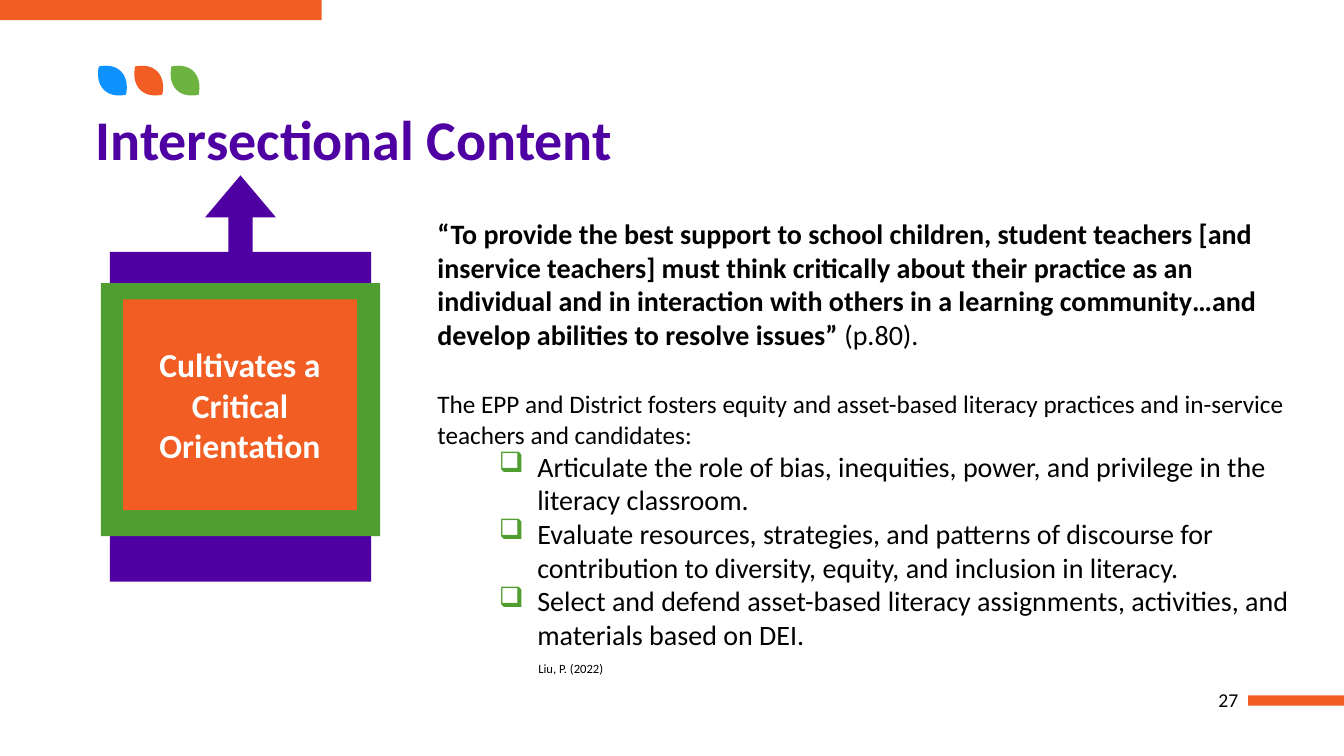
from dataclasses import dataclass

from lxml import etree
from pptx import Presentation
from pptx.dml.color import RGBColor
from pptx.enum.shapes import MSO_SHAPE
from pptx.enum.text import MSO_ANCHOR, PP_ALIGN
from pptx.oxml.ns import qn
from pptx.util import Inches, Pt

RECTANGLE = MSO_SHAPE.RECTANGLE
ARROW_CALLOUT = MSO_SHAPE.RIGHT_ARROW_CALLOUT
TOP, MIDDLE = MSO_ANCHOR.TOP, MSO_ANCHOR.MIDDLE
LEFT, CENTER, RIGHT = PP_ALIGN.LEFT, PP_ALIGN.CENTER, PP_ALIGN.RIGHT


@dataclass(frozen=True)
class Theme:
    font: str = "Calibri"
    orange: str = "F15D22"
    blue: str = "0D92FF"
    leaf_green: str = "6CB33F"
    green: str = "509E2F"
    purple: str = "4F00A3"
    black: str = "000000"
    white: str = "FFFFFF"
    title: int = 40
    callout: int = 24
    body: int = 20
    lead_in: int = 18
    page_number: int = 14
    citation: int = 9


THEME = Theme()


@dataclass(frozen=True)
class Frame:
    left: float
    top: float
    width: float
    height: float

    def lengths(self) -> list:
        return [Inches(n) for n in (self.left, self.top, self.width, self.height)]


@dataclass(frozen=True)
class Span:
    text: str
    size: int
    color: str = THEME.black
    bold: bool = False


@dataclass(frozen=True)
class Para:
    spans: tuple
    align: PP_ALIGN = LEFT
    line_spacing: float = 1.0
    space_before: float = 0
    bullet: str = ""


@dataclass(frozen=True)
class Block:
    frame: Frame
    color: str
    shape: MSO_SHAPE = RECTANGLE
    rotation: int = 0
    adjustments: tuple = ()


@dataclass(frozen=True)
class TextBox:
    frame: Frame
    paras: tuple
    anchor: MSO_ANCHOR = TOP
    side_inset: float = 0.1
    end_inset: float = 0.05


LEAF_START = (0.98, 0.66)
LEAF_CURVES = (
    (LEAF_START, (1.17, 0.62), (1.29, 0.74), (1.25, 0.94)),
    ((1.25, 0.94), (1.06, 0.98), (0.94, 0.86), LEAF_START),
)
LEAF_PITCH = 0.36
LEAF_COLORS = (THEME.blue, THEME.orange, THEME.leaf_green)
CURVE_STEPS = 16

BLOCKS = (
    Block(Frame(12.38, 6.9, 0.96, 0.1), THEME.orange),
    Block(Frame(0, 0, 3.19, 0.2), THEME.orange),
    Block(Frame(0.37, 2.46, 4.03, 2.59), THEME.purple, ARROW_CALLOUT, 270,
          (0.093, 0.136, 0.161, 0.812)),
    Block(Frame(1, 2.81, 2.77, 2.51), THEME.green),
    Block(Frame(1.22, 2.97, 2.32, 2.09), THEME.orange),
)

QUOTE = ("“To provide the best support to school children, student teachers [and inservice "
         "teachers] must think critically about their practice as an individual and in "
         "interaction with others in a learning community…and develop abilities to resolve "
         "issues” ")
LEAD_IN = ("The EPP and District fosters equity and asset-based literacy practices and "
           "in-service teachers and candidates:")
ACTIONS = (
    "Articulate the role of bias, inequities, power, and privilege in the literacy classroom.",
    "Evaluate resources, strategies, and patterns of discourse for contribution to diversity, "
    "equity, and inclusion in literacy.",
    "Select and defend asset-based literacy assignments, activities, and materials based on DEI.",
)

TEXT_BOXES = (
    TextBox(Frame(11.52, 6.8, 0.86, 0.28),
            (Para((Span("27", THEME.page_number),), RIGHT),), MIDDLE),
    TextBox(Frame(0.85, 1.06, 11.42, 0.7),
            (Para((Span("Intersectional Content", THEME.title, THEME.purple, True),),
                  line_spacing=0.9),)),
    TextBox(Frame(5.24, 6.48, 4.62, 0.35),
            (Para((Span("Liu, P. (2022)", THEME.citation),)),), end_inset=0.1),
    TextBox(Frame(4.24, 2.05, 8.68, 4.61),
            (Para((Span(QUOTE, THEME.body, bold=True), Span("(p.80).", THEME.body))),
             Para((Span(LEAD_IN, THEME.lead_in),), space_before=26.8),
             *(Para((Span(action, THEME.body),), bullet="❑") for action in ACTIONS)),
            end_inset=0.1),
    TextBox(Frame(1.22, 2.97, 2.32, 2.09),
            (Para((Span("Cultivates a Critical Orientation", THEME.callout,
                        THEME.white, True),), CENTER),), MIDDLE, 0.13, 0.13),
)


def set_all(target, values: dict) -> None:
    for name, value in values.items():
        setattr(target, name, value)


def paint(shape, color: str) -> None:
    shape.shadow.inherit = False
    shape.fill.solid()
    shape.fill.fore_color.rgb = RGBColor.from_string(color)
    shape.line.fill.background()


def draw_block(page, block: Block) -> None:
    shape = page.shapes.add_shape(block.shape, *block.frame.lengths())
    shape.rotation = block.rotation
    for index, value in enumerate(block.adjustments):
        shape.adjustments[index] = value
    paint(shape, block.color)


def curve_point(curve: tuple, t: float) -> tuple:
    weights = ((1 - t) ** 3, 3 * t * (1 - t) ** 2, 3 * t ** 2 * (1 - t), t ** 3)
    return tuple(sum(w * point[axis] for w, point in zip(weights, curve)) for axis in (0, 1))


def draw_leaf(page, offset: float, color: str) -> None:
    outline = [curve_point(curve, step / CURVE_STEPS)
               for curve in LEAF_CURVES for step in range(1, CURVE_STEPS + 1)]
    start, *points = [(Inches(x + offset), Inches(y)) for x, y in (LEAF_START, *outline)]
    builder = page.shapes.build_freeform(*start)
    builder.add_line_segments(points)
    paint(builder.convert_to_shape(), color)


def add_bullet(paragraph, symbol: str) -> None:
    properties = paragraph._p.get_or_add_pPr()
    properties.set("marL", str(Inches(0.99)))
    properties.set("indent", str(Inches(-0.38)))
    bullet_color = etree.SubElement(properties, qn("a:buClr"))
    etree.SubElement(bullet_color, qn("a:srgbClr")).set("val", THEME.green)
    etree.SubElement(properties, qn("a:buChar")).set("char", symbol)


def draw_text(page, box: TextBox) -> None:
    frame = page.shapes.add_textbox(*box.frame.lengths()).text_frame
    side, end = Inches(box.side_inset), Inches(box.end_inset)
    set_all(frame, {"word_wrap": True, "vertical_anchor": box.anchor,
                    "margin_left": side, "margin_right": side,
                    "margin_top": end, "margin_bottom": end})
    for index, para in enumerate(box.paras):
        paragraph = frame.add_paragraph() if index else frame.paragraphs[0]
        set_all(paragraph, {"alignment": para.align, "line_spacing": para.line_spacing})
        if para.space_before:
            paragraph.space_before = Pt(para.space_before)
        if para.bullet:
            add_bullet(paragraph, para.bullet)
        for span in para.spans:
            run = paragraph.add_run()
            run.text = span.text
            set_all(run.font, {"name": THEME.font, "size": Pt(span.size), "bold": span.bold})
            run.font.color.rgb = RGBColor.from_string(span.color)


def main() -> None:
    deck = Presentation()
    set_all(deck, {"slide_width": Inches(13.33), "slide_height": Inches(7.5)})
    page = deck.slides.add_slide(deck.slide_layouts[6])
    for block in BLOCKS:
        draw_block(page, block)
    for index, color in enumerate(LEAF_COLORS):
        draw_leaf(page, index * LEAF_PITCH, color)
    for box in TEXT_BOXES:
        draw_text(page, box)
    deck.save("out.pptx")


if __name__ == "__main__":
    main()
